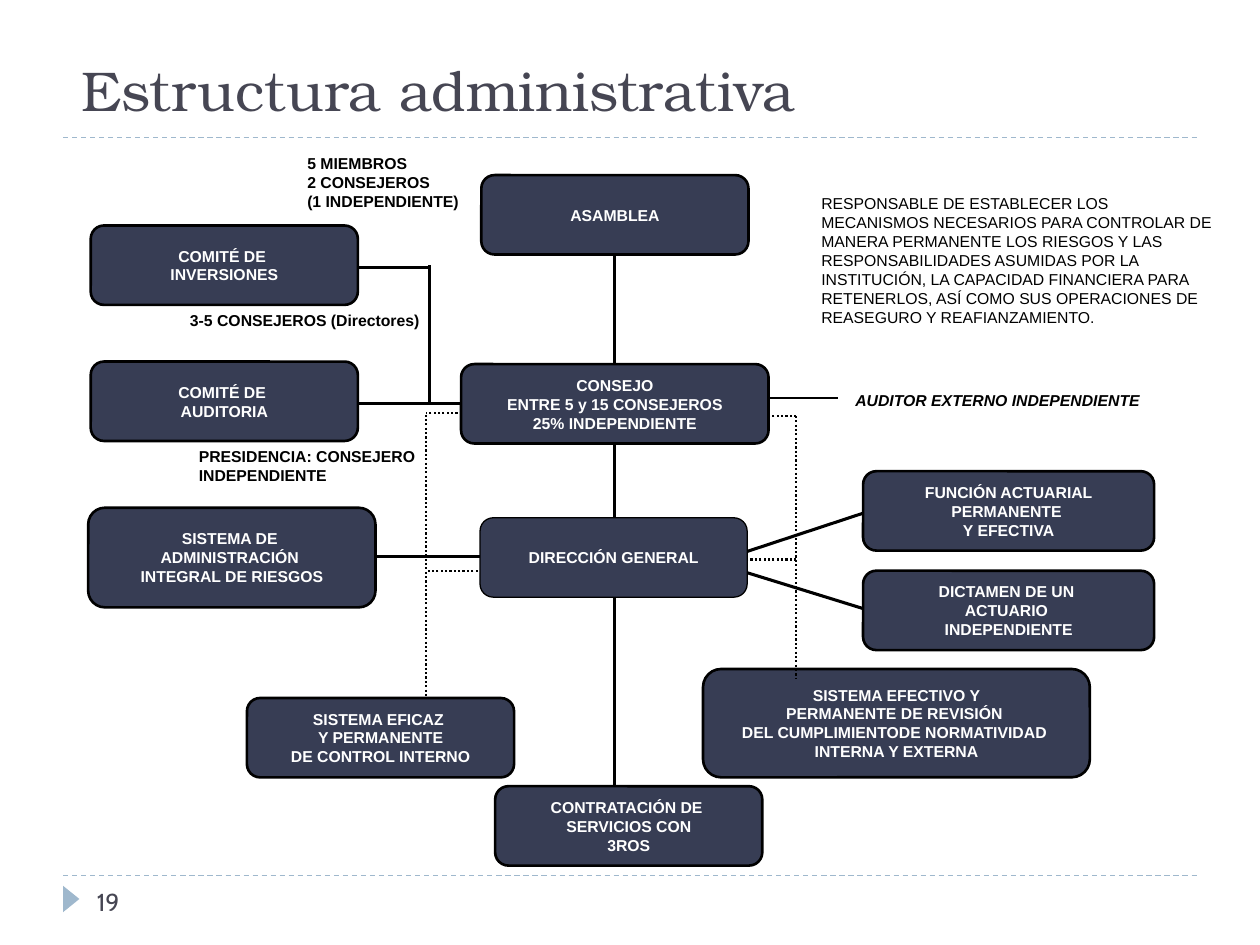
import dataclasses
import typing

import pptx
import pptx.dml.color
import pptx.enum.dml
import pptx.enum.shapes
import pptx.enum.text
import pptx.oxml.xmlchemy
import pptx.util
from pptx.oxml.ns import qn

COLS, ROWS = 100, 75
BLACK, NAVY, WHITE, SLATE, BLUE = "000000", "373D54", "FFFFFF", "464653", "9FB8CD"
WIDE, HIGH = 21.2, 6.3
DASH = pptx.enum.dml.MSO_LINE.DASH
DOT = pptx.enum.dml.MSO_LINE.ROUND_DOT
ALIGN = pptx.enum.text.PP_ALIGN
ANCHOR = pptx.enum.text.MSO_ANCHOR
FIT = pptx.enum.text.MSO_AUTO_SIZE
FORM = pptx.enum.shapes.MSO_SHAPE


@dataclasses.dataclass
class Box:
    text: str
    col: float
    row: float
    wide: float = WIDE
    high: float = HIGH
    edge: float = 1.5


@dataclasses.dataclass
class Link:
    col: float
    row: float
    to_col: float
    to_row: float
    width: float = 1.75
    dash: typing.Any = None
    tint: str = BLACK


@dataclasses.dataclass
class Note:
    text: str
    col: float
    row: float
    wide: float
    high: float
    bold: bool = True
    slant: bool = False
    wrap: bool = True


TRUNK = 48.8
LEFT, RIGHT = 33.8, 63.2

RULES = [Link(5, row, 95, row, 0.75, DASH, BLUE) for row in (69.5, 10.9)]

UNDER = [
    Link(RIGHT, 44.4, 59.3, 44.4, 1.25, DOT),
    Link(RIGHT, 33, 60.8, 33, 1.25, DOT),
    Link(LEFT, 32.9, LEFT, 61.2, 1.25, DOT),
    Link(39.3, 45.3, LEFT, 45.3, 1.25, DOT),
    Link(37.7, 32.8, LEFT, 32.8, 1.25, DOT),
    Link(TRUNK, 20.2, TRUNK, 28.9),
    Link(TRUNK, 32.7, TRUNK, 41.4),
    Link(TRUNK, 40.4, TRUNK, 62.4),
    Link(38.5, 32, 25.9, 32),
    Link(39.3, 44.2, 29.1, 44.2),
    Link(68.5, 48.3, 58.8, 45.3),
    Link(68.9, 40.6, 59.2, 43.8),
]

OVER = [
    Link(RIGHT, 33, RIGHT, 53.9, 1.25, DOT),
    Link(34.2, 21.2, 21.6, 21.2),
    Link(34.1, 32, 34.1, 21),
    Link(61, 31.6, 66.5, 31.6, 0.75),
]

MAIN = [
    Box("SISTEMA DE \nADMINISTRACIÓN \nINTEGRAL DE RIESGOS", 7, 40.3, 22.8, 7.9),
    Box("DIRECCIÓN GENERAL", 38.1, 41.1, edge=0.75),
    Box("SISTEMA EFICAZ \nY PERMANENTE\nDE CONTROL INTERNO", 19.6, 55.4),
    Box("ASAMBLEA", 38.2, 13.9),
    Box("CONTRATACIÓN DE \nSERVICIOS CON\n3ROS", 39.3, 62.4),
    Box("CONSEJO\nENTRE 5 y 15 CONSEJEROS\n25% INDEPENDIENTE", 36.6, 28.9, 24.4),
    Box("SISTEMA EFECTIVO Y\nPERMANENTE DE REVISIÓN \n"
        "DEL CUMPLIMIENTODE NORMATIVIDAD \nINTERNA Y EXTERNA",
        55.8, 53.1, 30.7, 8.6),
    Box("FUNCIÓN ACTUARIAL\nPERMANENTE \nY EFECTIVA", 68.5, 37.4, 23.1),
    Box("DICTAMEN DE UN \nACTUARIO \nINDEPENDIENTE", 68.5, 45.3, 23.1),
]

BOARDS = [
    Box("COMITÉ DE \nAUDITORIA", 7.2, 28.7),
    Box("COMITÉ DE \nINVERSIONES", 7.2, 17.9),
]

NOTES = [
    Note("5 MIEMBROS\n2 CONSEJEROS\n(1 INDEPENDIENTE)", 23.4, 11.7, 18.1, 5.6),
    Note("3-5 CONSEJEROS (Directores)", 14.1, 24.2, 20.4, 2.5),
    Note("PRESIDENCIA: CONSEJERO\nINDEPENDIENTE", 14.8, 35, 19.3, 4),
    Note("AUDITOR EXTERNO INDEPENDIENTE", 66.9, 30.5, 24.8, 2.5, slant=True, wrap=False),
    Note("RESPONSABLE DE ESTABLECER LOS MECANISMOS NECESARIOS PARA CONTROLAR DE "
         "MANERA PERMANENTE LOS RIESGOS Y LAS RESPONSABILIDADES ASUMIDAS POR LA "
         "INSTITUCIÓN, LA CAPACIDAD FINANCIERA PARA RETENERLOS, ASÍ COMO SUS "
         "OPERACIONES DE REASEGURO Y REAFIANZAMIENTO.",
         64.2, 14.9, 33.1, 11.6, bold=False),
]

deck = pptx.Presentation()
deck.slide_width = pptx.util.Inches(10)
deck.slide_height = pptx.util.Inches(7.5)
slide = deck.slides.add_slide(deck.slide_layouts[6])


def place(col: float, row: float) -> tuple[int, int]:
    return round(deck.slide_width * col / COLS), round(deck.slide_height * row / ROWS)


def color(code: str) -> pptx.dml.color.RGBColor:
    return pptx.dml.color.RGBColor.from_string(code)


def write(shape: typing.Any, text: str, *, size: float = 9, font: str = "Arial",
          tint: str = BLACK, bold: bool = False, slant: bool = False,
          align: typing.Any = ALIGN.LEFT, anchor: typing.Any = ANCHOR.TOP,
          wrap: bool = True, fit: typing.Any = FIT.NONE) -> None:
    frame = shape.text_frame
    frame.word_wrap = wrap
    frame.auto_size = fit
    frame.vertical_anchor = anchor
    frame.text = text
    for para in frame.paragraphs:
        para.alignment = align
        for run in para.runs:
            face = run.font
            face.name, face.size = font, pptx.util.Pt(size)
            face.bold, face.italic = bold, slant
            face.color.rgb = color(tint)


def draw_link(link: Link) -> None:
    line = slide.shapes.add_connector(
        pptx.enum.shapes.MSO_CONNECTOR.STRAIGHT,
        *place(link.col, link.row), *place(link.to_col, link.to_row))
    line.line.color.rgb = color(link.tint)
    line.line.width = pptx.util.Pt(link.width)
    if link.dash is not None:
        line.line.dash_style = link.dash
    props = line._element.spPr
    props.append(props.makeelement(qn("a:effectLst"), {}))


def draw_box(box: Box) -> None:
    shape = slide.shapes.add_shape(
        FORM.ROUNDED_RECTANGLE, *place(box.col, box.row), *place(box.wide, box.high))
    shape.shadow.inherit = False
    shape.fill.solid()
    shape.fill.fore_color.rgb = color(NAVY)
    shape.line.color.rgb = color(BLACK)
    shape.line.width = pptx.util.Pt(box.edge)
    write(shape, box.text, tint=WHITE, bold=True, align=ALIGN.CENTER,
          anchor=ANCHOR.MIDDLE, wrap=False)


def add_text(col: float, row: float, wide: float, high: float,
             text: str, **style: typing.Any) -> None:
    write(slide.shapes.add_textbox(*place(col, row), *place(wide, high)), text, **style)


def draw_note(note: Note) -> None:
    add_text(note.col, note.row, note.wide, note.high, note.text, bold=note.bold,
             slant=note.slant, wrap=note.wrap, fit=FIT.SHAPE_TO_FIT_TEXT)


def draw_mark() -> None:
    mark = slide.shapes.add_shape(
        FORM.ISOSCELES_TRIANGLE, *place(4.6, 70.7), *place(2.1, 1.3))
    mark.rotation = 90
    mark.shadow.inherit = False
    mark.fill.solid()
    mark.fill.fore_color.rgb = color(BLUE)
    mark.line.fill.background()


def draw_all(draw: typing.Callable, items: list) -> None:
    for item in items:
        draw(item)


draw_all(draw_link, RULES)
draw_mark()
draw_all(draw_link, UNDER)
add_text(5.5, 0, 90, 10.2, "Estructura administrativa", size=32,
         font="TeX Gyre Bonum", tint=SLATE, anchor=ANCHOR.BOTTOM)
add_text(6.7, 69.9, 21.7, 4, "19", size=14, font="Cabin", tint=SLATE)
draw_all(draw_box, MAIN)
draw_all(draw_link, OVER)
draw_all(draw_note, NOTES)
draw_all(draw_box, BOARDS)
deck.save("out.pptx")
